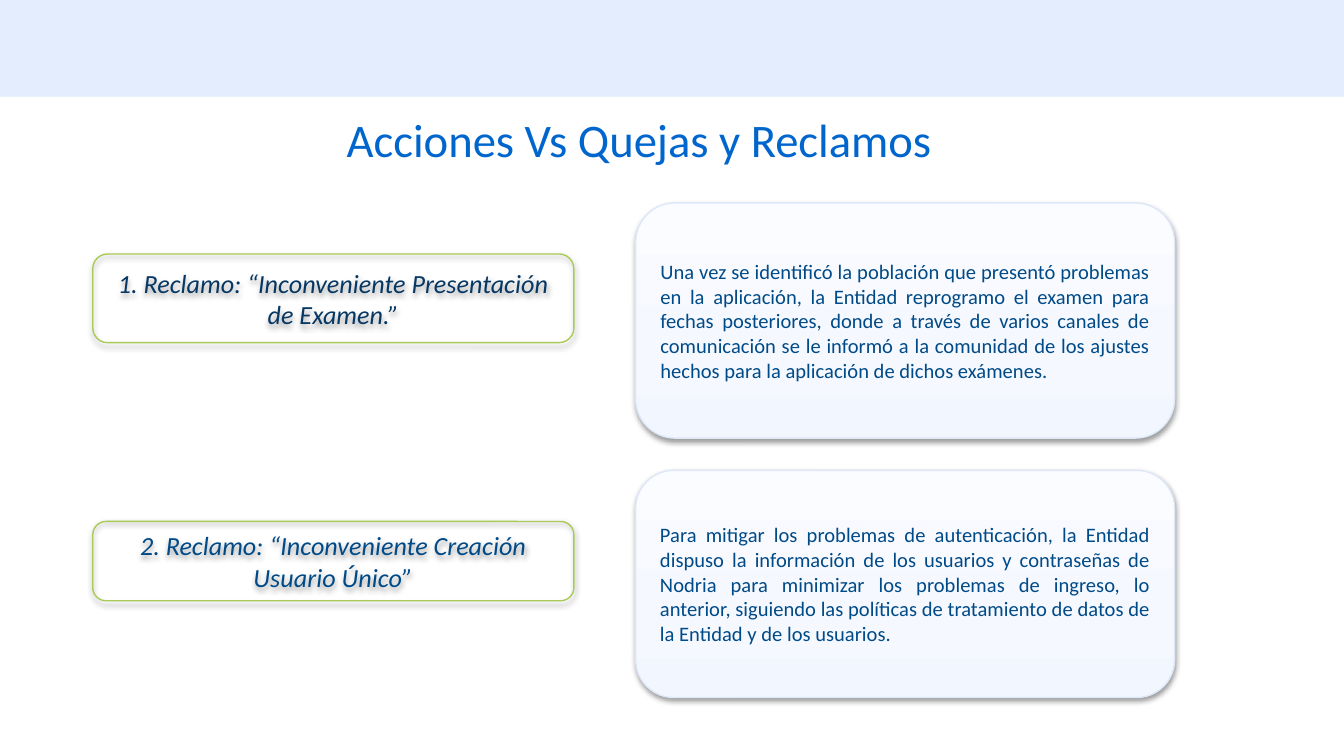
from copy import deepcopy

from lxml.etree import SubElement
from pptx import Presentation
from pptx.dml.color import RGBColor
from pptx.enum.shapes import MSO_SHAPE
from pptx.enum.text import MSO_ANCHOR, MSO_AUTO_SIZE, PP_ALIGN
from pptx.oxml.ns import qn
from pptx.util import Inches, Pt

WIDTH = 10
HEIGHT = WIDTH * 9 / 16
CLAIM_COL = (0.69, 3.58)
ACTION_COL = (4.73, 4.01)
NAVY, BLUE = "073763", "004A87"
GRADIENT = [(0, "F1F6FF"), (0.35, "F5F8FF"), (1, "FBFCFF")]
ROWS = [
    {
        "claim": "1. Reclamo: “Inconveniente Presentación de Examen.”",
        "claim_row": (1.89, 0.66),
        "color": NAVY,
        "action": "Una vez se identificó la población que presentó problemas en la "
                  "aplicación, la Entidad reprogramo el examen para fechas posteriores, "
                  "donde a través de varios canales de comunicación se le informó a la "
                  "comunidad de los ajustes hechos para la aplicación de dichos exámenes.",
        "action_row": (1.51, 1.75),
    },
    {
        "claim": "2. Reclamo: “Inconveniente Creación Usuario Único”",
        "claim_row": (3.88, 0.59),
        "color": BLUE,
        "action": "Para mitigar los problemas de autenticación, la Entidad dispuso la "
                  "información de los usuarios y contraseñas de Nodria para minimizar los "
                  "problemas de ingreso, lo anterior, siguiendo las políticas de "
                  "tratamiento de datos de la Entidad y de los usuarios.",
        "action_row": (3.5, 1.69),
    },
]


def rgb(value):
    """Turn a hex string into a colour."""
    return RGBColor.from_string(value)


def write(sp, text, size, color, align=PP_ALIGN.LEFT, italic=False, spacing=None):
    """Put one formatted paragraph into a shape."""
    tf = sp.text_frame
    tf.word_wrap = True
    tf.auto_size = MSO_AUTO_SIZE.NONE
    tf.vertical_anchor = MSO_ANCHOR.MIDDLE
    p = tf.paragraphs[0]
    p.alignment = align
    if spacing:
        p.line_spacing = spacing
    r = p.add_run()
    r.text = text
    r.font.name = "Calibri"
    r.font.size = Pt(size)
    r.font.italic = italic
    r.font.color.rgb = rgb(color)


def add_shadow(sp):
    """Give a shape a soft shadow that falls straight down."""
    sp.shadow.inherit = False
    effects = sp._element.spPr.find(qn("a:effectLst"))
    shadow = SubElement(effects, qn("a:outerShdw"), blurRad=str(Pt(3.1)),
                        dist=str(Pt(1.6)), dir="5400000", rotWithShape="0")
    color = SubElement(shadow, qn("a:srgbClr"), val="000000")
    SubElement(color, qn("a:alpha"), val="38000")


def fill_gradient(sp, stops):
    """Fill a shape with three stops that run from bottom to top."""
    sp.fill.gradient()
    sp.fill.gradient_angle = 90
    first = next(sp._element.spPr.iter(qn("a:gs")))
    first.addnext(deepcopy(first))
    for stop, (place, color) in zip(sp.fill.gradient_stops, stops):
        stop.color.rgb = rgb(color)
        stop.position = place


def add_box(s, col, row, line):
    """Add an outlined rounded box at a column and a row."""
    (x, w), (y, h) = col, row
    sp = s.shapes.add_shape(MSO_SHAPE.ROUNDED_RECTANGLE,
                            Inches(x), Inches(y), Inches(w), Inches(h))
    sp.line.color.rgb = rgb(line)
    sp.line.width = Pt(0.75)
    add_shadow(sp)
    return sp


def add_claim(s, row):
    """Add the claim box of a row."""
    sp = add_box(s, CLAIM_COL, row["claim_row"], "AACA57")
    sp.fill.background()
    write(sp, row["claim"], 14, row["color"], align=PP_ALIGN.CENTER, italic=True)


def add_action(s, row):
    """Add the gradient action box of a row."""
    sp = add_box(s, ACTION_COL, row["action_row"], "DEE8F9")
    fill_gradient(sp, GRADIENT)
    write(sp, row["action"], 11, BLUE, align=PP_ALIGN.JUSTIFY)


def add_band(s):
    """Add the pale band across the top."""
    sp = s.shapes.add_shape(MSO_SHAPE.RECTANGLE, 0, 0, Inches(WIDTH), Inches(0.72))
    sp.fill.solid()
    sp.fill.fore_color.rgb = rgb("E4EDFE")
    sp.line.fill.background()
    sp.shadow.inherit = False


def set_title(s, text):
    """Place and format the title."""
    sp = s.shapes.title
    sp.left, sp.top, sp.width, sp.height = map(Inches, (2.51, 0.78, 4.83, 0.56))
    tf = sp.text_frame
    tf.margin_left = tf.margin_right = Inches(0.07)
    tf.margin_top = tf.margin_bottom = Inches(0.04)
    write(sp, text, 25, "0066CD", spacing=0.9)


def main():
    """Build and save the slide."""
    prs = Presentation()
    prs.slide_width, prs.slide_height = Inches(WIDTH), Inches(HEIGHT)
    s = prs.slides.add_slide(prs.slide_layouts[5])
    add_band(s)
    set_title(s, "Acciones Vs Quejas y Reclamos")
    for row in ROWS:
        add_claim(s, row)
        add_action(s, row)
    prs.save("out.pptx")


if __name__ == "__main__":
    main()
